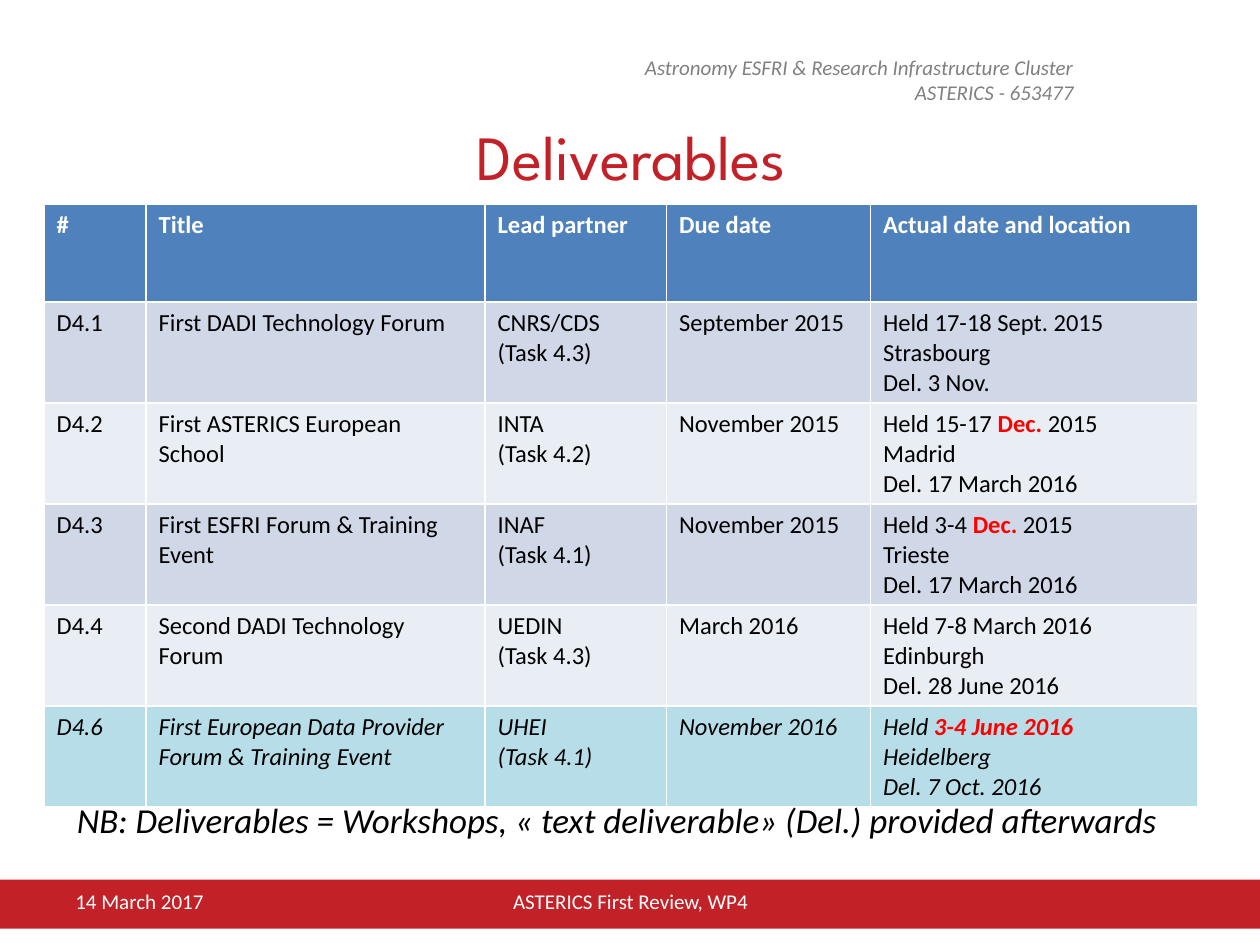
"""Build the ASTERICS deliverables slide with its table, note and footer."""
from pptx import Presentation, util as u
from pptx.dml.color import RGBColor
from pptx.enum import shapes, text
from pptx.oxml import parse_xml
from pptx.oxml.ns import nsdecls

RED, WHITE, BLACK, ALERT = "C32128", "FFFFFF", "000000", "FF0000"
LEFT, CENTER, RIGHT = text.PP_ALIGN.LEFT, text.PP_ALIGN.CENTER, text.PP_ALIGN.RIGHT

deck = Presentation()
deck.slide_width, deck.slide_height = u.Inches(10), u.Inches(7.5)
slide = deck.slides.add_slide(deck.slide_layouts[1])


def share(left, top, width, height):
    """Turn percentages of the slide into lengths."""
    wide, high = deck.slide_width / 100, deck.slide_height / 100
    return [round(v) for v in (left * wide, top * high, width * wide, height * high)]


def style(font, size, color, name="Calibri", bold=False, italic=False):
    """Set every font property in one call."""
    font.size, font.name, font.bold, font.italic = u.Pt(size), name, bold, italic
    font.color.rgb = RGBColor.from_string(color)


footer_band = slide.shapes.add_shape(shapes.MSO_SHAPE.RECTANGLE, *share(0, 93.07, 100, 5.2))
footer_band.shadow.inherit = False
footer_band.fill.solid()
footer_band.fill.fore_color.rgb = RGBColor.from_string(RED)
footer_band.line.fill.background()

title, note = slide.placeholders
title.left, title.top, title.width, title.height = share(5.1, 12.27, 90, 8.27)
title.text_frame.text = "Deliverables"
title.text_frame.auto_size = text.MSO_AUTO_SIZE.NONE
title.text_frame.vertical_anchor = text.MSO_ANCHOR.MIDDLE
title.text_frame.paragraphs[0].alignment = CENTER
style(title.text_frame.paragraphs[0].font, 36, RED, "League Spartan")

note.left, note.top, note.width, note.height = share(5.1, 25.87, 90, 66.8)
note.text_frame.text = "NB: Deliverables = Workshops, « text deliverable» (Del.) provided afterwards"
note.text_frame.auto_size = text.MSO_AUTO_SIZE.NONE
note.text_frame.vertical_anchor = text.MSO_ANCHOR.BOTTOM
note.text_frame.margin_bottom = u.Inches(0.28)
remark = note.text_frame.paragraphs[0]
indent = remark._p.get_or_add_pPr()
indent.set("marL", "0")
indent.set("indent", "0")
indent.append(parse_xml(f"<a:buNone {nsdecls('a')}/>"))
remark.space_before = u.Pt(0)
style(remark.font, 20, BLACK, italic=True)

captions = [
    ("Astronomy ESFRI & Research Infrastructure Cluster\nASTERICS - 653477",
     (43.7, 5.07, 42.5, 6.67), RIGHT, "808080", True),
    ("ASTERICS First Review, WP4", (34.2, 92.67, 31.7, 5.33), CENTER, WHITE, False),
    ("14 March 2017", (5, 92.67, 23.3, 5.33), LEFT, WHITE, False),
]
for words, place, alignment, color, italic in captions:
    caption = slide.shapes.add_textbox(*share(*place)).text_frame
    caption.word_wrap = True
    caption.vertical_anchor = text.MSO_ANCHOR.MIDDLE
    caption.text = words
    for line in caption.paragraphs:
        line.alignment = alignment
        style(line.font, 12, color, italic=italic)

# Asterisks enclose the dates that are highlighted.
deliverables = [
    ("#", "Title", "Lead partner", "Due date", "Actual date and location"),
    ("D4.1", "First DADI Technology Forum", "CNRS/CDS\n(Task 4.3)", "September 2015",
     "Held 17-18 Sept. 2015\nStrasbourg\nDel. 3 Nov."),
    ("D4.2", "First ASTERICS European School", "INTA\n(Task 4.2)", "November 2015",
     "Held 15-17 *Dec.* 2015\nMadrid\nDel. 17 March 2016"),
    ("D4.3", "First ESFRI Forum & Training Event", "INAF\n(Task 4.1)", "November 2015",
     "Held 3-4 *Dec.* 2015\nTrieste\nDel. 17 March 2016"),
    ("D4.4", "Second DADI Technology Forum", "UEDIN\n(Task 4.3)", "March 2016",
     "Held 7-8 March 2016\nEdinburgh\nDel. 28 June 2016"),
    ("D4.6", "First European Data Provider Forum & Training Event", "UHEI\n(Task 4.1)",
     "November 2016", "Held *3-4 June 2016*\nHeidelberg\nDel. 7 Oct. 2016"),
]
row_fills = ["4F81BD", "D0D8E8", "E9EDF4", "D0D8E8", "E9EDF4", "B7DEE8"]
schedule = slide.shapes.add_table(
    len(deliverables), len(deliverables[0]), *share(3.5, 21.6, 91.6, 62.27)).table
for column, percent in zip(schedule.columns, (8.1, 26.9, 14.4, 16.2, 26)):
    column.width = share(0, 0, percent, 0)[2]

for row, (entries, fill) in enumerate(zip(deliverables, row_fills)):
    header, latest = row == 0, row == len(deliverables) - 1
    for col, entry in enumerate(entries):
        cell = schedule.cell(row, col)
        cell.fill.solid()
        cell.fill.fore_color.rgb = RGBColor.from_string(fill)
        cell.text = entry.replace("*", "")
        for line, words in zip(cell.text_frame.paragraphs, entry.split("\n")):
            style(line.font, 14, WHITE if header else BLACK, bold=header, italic=latest)
            if "*" in words:
                line.clear()
                for part, piece in enumerate(words.split("*")):
                    if piece:
                        run = line.add_run()
                        run.text = piece
                        marked = part % 2 == 1
                        style(run.font, 14, ALERT if marked else BLACK, bold=marked, italic=latest)

deck.save("out.pptx")
